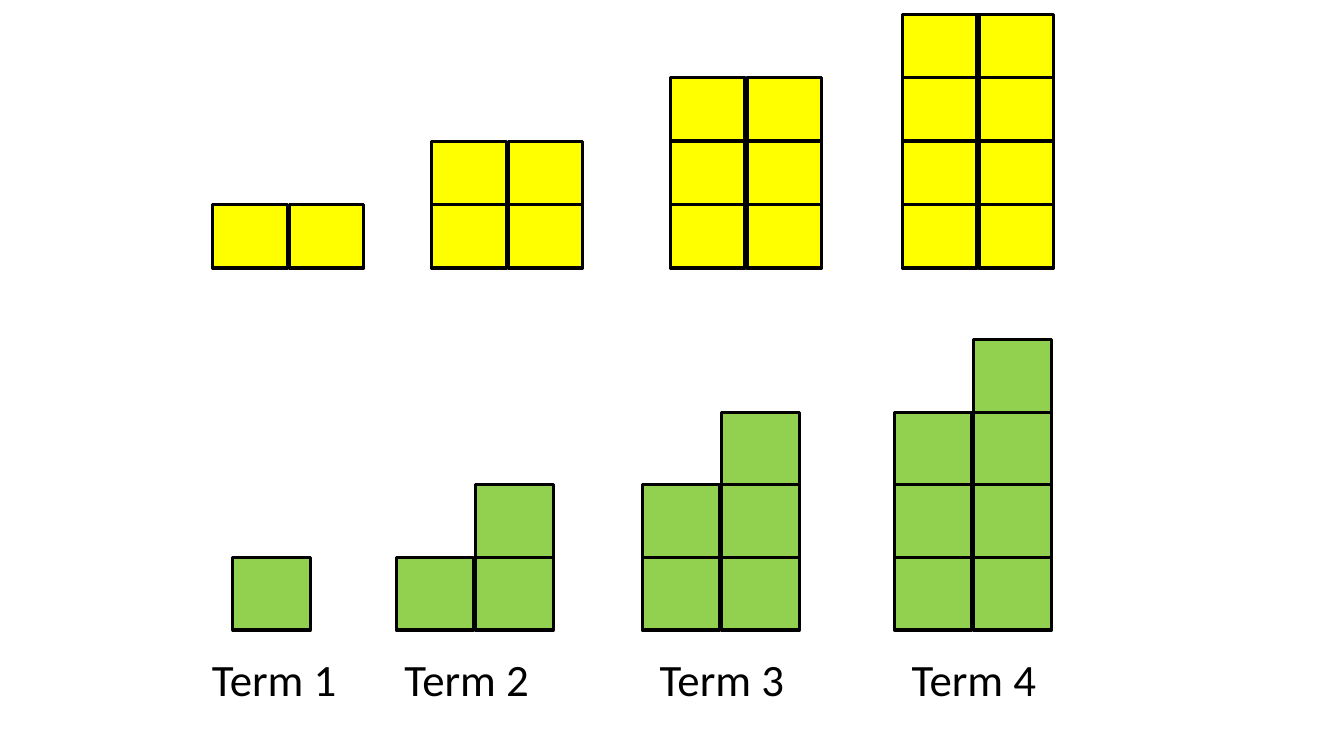
from pptx import Presentation
from pptx.dml.color import RGBColor
from pptx.enum.shapes import MSO_SHAPE
from pptx.enum.text import MSO_ANCHOR, PP_ALIGN
from pptx.util import Inches, Pt

RECT = MSO_SHAPE.RECTANGLE
TOP = MSO_ANCHOR.TOP
CENTER = PP_ALIGN.CENTER
YELLOW = RGBColor(0xFF, 0xFF, 0x00)
GREEN = RGBColor(0x92, 0xD0, 0x50)
BLACK = RGBColor(0x00, 0x00, 0x00)

# Each stack: left edge, then the number of tiles in each column
PATTERNS = [
    {"color": YELLOW, "tile": (0.74, 0.63), "pitch": (0.76, 0.63), "base": 2.03,
     "stacks": [(2.11, (1, 1)), (4.28, (2, 2)), (6.65, (3, 3)), (8.95, (4, 4))]},
    {"color": GREEN, "tile": (0.77, 0.72), "pitch": (0.79, 0.72), "base": 5.53,
     "stacks": [(2.31, (1,)), (3.93, (1, 2)), (6.37, (2, 3)), (8.87, (3, 4))]},
]
LABELS = [("Term 1", 1.95), ("Term 2", 3.86), ("Term 3", 6.39), ("Term 4", 8.89)]
LABEL_TOP, LABEL_WIDTH, LABEL_HEIGHT = 6.42, 1.54, 0.49


def add_tile(shapes, x, y, size, color):
    sp = shapes.add_shape(RECT, Inches(x), Inches(y), *map(Inches, size))
    sp.shadow.inherit = False
    sp.fill.solid()
    sp.fill.fore_color.rgb = color
    sp.line.color.rgb = BLACK
    sp.line.width = Pt(2.25)


def add_pattern(shapes, pattern):
    """Draw every stack of a pattern, building each column up from the base row."""
    dx, dy = pattern["pitch"]
    for left, heights in pattern["stacks"]:
        for col, height in enumerate(heights):
            for row in range(height):
                add_tile(shapes, left + col * dx, pattern["base"] - row * dy,
                         pattern["tile"], pattern["color"])


def add_label(shapes, text, left):
    sp = shapes.add_textbox(Inches(left), Inches(LABEL_TOP),
                            Inches(LABEL_WIDTH), Inches(LABEL_HEIGHT))
    tf = sp.text_frame
    tf.word_wrap = True
    tf.vertical_anchor = TOP
    p = tf.paragraphs[0]
    p.alignment = CENTER
    r = p.add_run()
    r.text = text
    r.font.name = "Calibri"
    r.font.size = Pt(32)
    r.font.color.rgb = BLACK


def main():
    prs = Presentation()
    prs.slide_width, prs.slide_height = Inches(13.33), Inches(7.5)
    s = prs.slides.add_slide(prs.slide_layouts[6])
    for pattern in PATTERNS:
        add_pattern(s.shapes.add_group_shape().shapes, pattern)
    for text, left in LABELS:
        add_label(s.shapes, text, left)
    prs.save("out.pptx")


if __name__ == "__main__":
    main()
